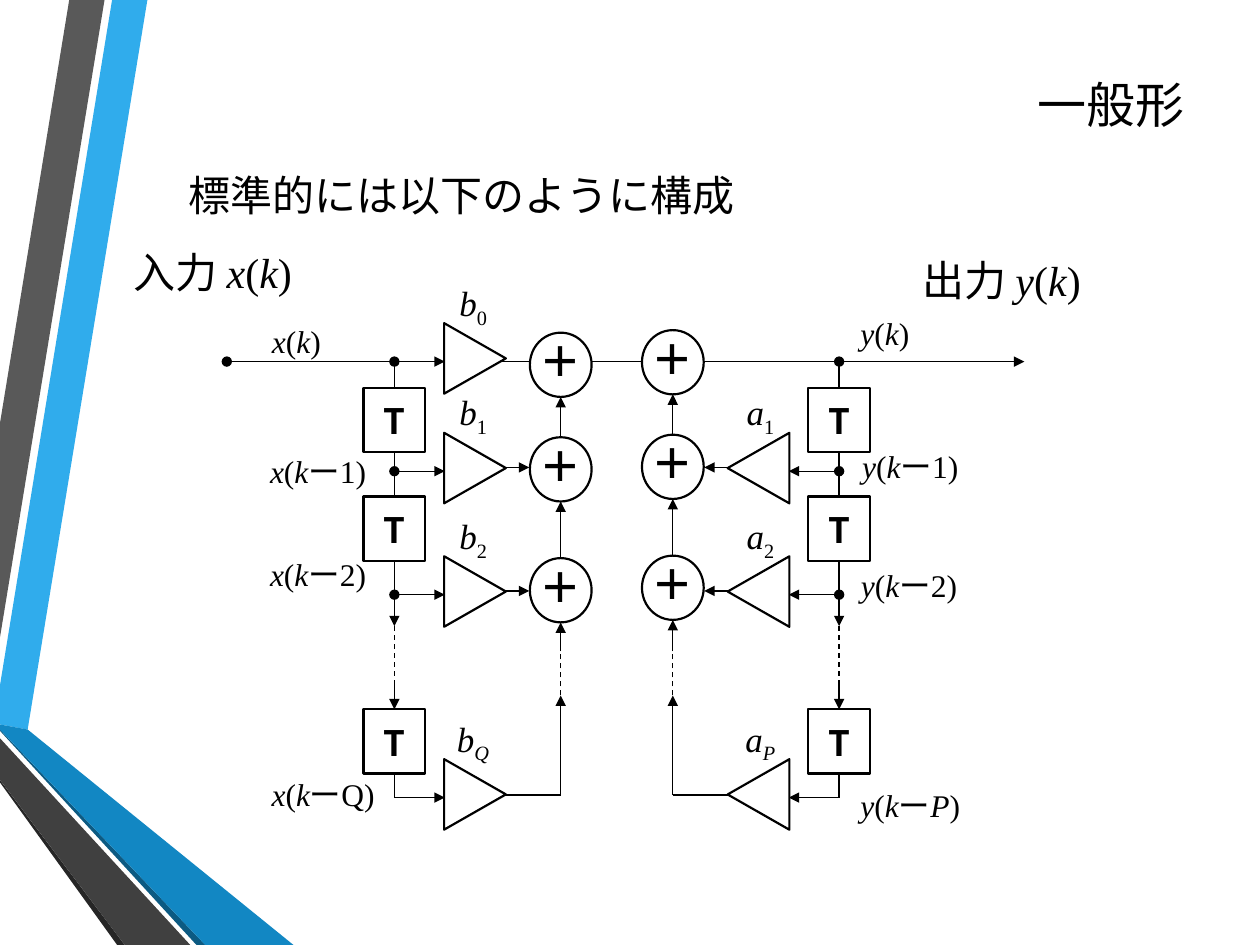
from lxml.etree import SubElement
from pptx import Presentation
from pptx.dml.color import RGBColor
from pptx.enum.dml import MSO_LINE
from pptx.enum.shapes import MSO_CONNECTOR, MSO_SHAPE
from pptx.enum.text import MSO_ANCHOR, PP_ALIGN
from pptx.oxml.ns import qn
from pptx.util import Inches, Pt

INK, PAPER = "000000", "FFFFFF"
SERIF, SANS, KANA = "Times New Roman", "Calibri", "Noto Sans CJK JP"
LEFT, MID, RIGHT = PP_ALIGN.LEFT, PP_ALIGN.CENTER, PP_ALIGN.RIGHT

TITLE = "一般形"
BANDS = [
    ("30ACEC", [(0, 5.44), (0, 5.75), (0.22, 5.79), (1.17, 0), (0.89, 0)]),
    ("595959", [(0.83, 0), (0.55, 0), (0, 3.36), (0, 5.06)]),
    ("262626", [(0, 6.19), (0, 6.21), (0.93, 7.5), (0.99, 7.5)]),
    ("0C5A82", [(0, 5.79), (0, 5.8), (1.56, 7.5), (1.63, 7.5)]),
    ("1287C3", [(0, 5.79), (1.63, 7.5), (2.33, 7.5), (0.22, 5.79), (0, 5.75)]),
    ("404040", [(0, 6.19), (0.99, 7.5), (1.51, 7.5), (0, 5.86)]),
]
NOTES = [
    ("標準的には以下のように構成", 1.4, 1.3, 8.1, 24, LEFT),
    ("出力 *y*(*k*)", 7.22, 1.97, 1.76, 24, LEFT),
    ("入力 *x*(*k*)", 0.96, 1.91, 1.76, 24, LEFT),
    ("*x*(*k*)", 2.06, 2.51, 1.14, 18, LEFT),
    ("*x*(*k*ー1)", 1.81, 3.54, 1.43, 18, MID),
    ("*x*(*k*ー2)", 1.81, 4.36, 1.43, 18, MID),
    ("*x*(*k*ーQ)", 1.85, 6.1, 1.43, 18, MID),
    ("*y*(*k*)", 6.73, 2.44, 1.14, 18, LEFT),
    ("*y*(*k*ー1)", 6.51, 3.5, 1.43, 18, MID),
    ("*y*(*k*ー2)", 6.5, 4.44, 1.43, 18, MID),
    ("*y*(*k*ー*P*)", 6.51, 6.19, 1.43, 18, MID),
]
TAPS = [2.87, 3.74, 4.72, 6.33]
SUMS = [2.64, 3.47, 4.43]
DELAYS = [3.08, 3.94, 5.63]
SIDES = [
    dict(way=1, col=3.13, amp=3.77, add=4.45, lift=0, turn=90,
         gains=["*b*_0", "*b*_1", "*b*_2", "*b**_Q*"]),
    dict(way=-1, col=6.66, amp=6.02, add=5.34, lift=0.02, turn=270,
         gains=[None, "*a*_1", "*a*_2", "*a**_P*"]),
]
WIDE, HIGH = 0.49, 0.51

deck = Presentation()
deck.slide_width, deck.slide_height = Inches(10), Inches(7.5)
slide = deck.slides.add_slide(deck.slide_layouts[5])
shapes = slide.shapes


def tint(part, code):
    """Give a fill a solid colour."""
    part.solid()
    part.fore_color.rgb = RGBColor.from_string(code)


def assign(item, values):
    """Set attributes from a dict."""
    for key, value in values.items():
        setattr(item, key, value)


def write(frame, text, size, align, face=SERIF, tight=False, **look):
    """Write text where *stars* mark italics and _ starts a subscript."""
    assign(frame, dict(word_wrap=True))
    para = frame.paragraphs[0]
    para.alignment = align
    if tight:
        para.line_spacing = Pt(16)
        assign(frame, dict(margin_left=0, margin_right=0, margin_bottom=0,
                           vertical_anchor=MSO_ANCHOR.MIDDLE))
    for num, piece in enumerate(text.split("*")):
        if not piece:
            continue
        run = para.add_run()
        run.text = piece.lstrip("_")
        font = run.font
        assign(font, dict(name=face, size=Pt(size), italic=num % 2 == 1, **look))
        tint(font.fill, INK)
        SubElement(run._r.rPr, qn("a:ea"), typeface=KANA)
        if piece.startswith("_"):
            run._r.rPr.set("baseline", "-25000")


def label(text, left, top, width, size, align, high=0.5, tight=False):
    """Add a text box."""
    box = shapes.add_textbox(*map(Inches, (left, top, width, high)))
    if tight:
        box.text_frame.margin_top = 0
    write(box.text_frame, text, size, align, tight=tight)


def block(kind, mid, top, width, high, text="", size=20, face=SANS, turn=0):
    """Add an outlined shape centred on mid."""
    item = shapes.add_shape(kind, *map(Inches, (mid - width / 2, top, width, high)))
    item.shadow.inherit = False
    item.rotation = turn
    tint(item.fill, PAPER)
    tint(item.line.fill, INK)
    item.line.width = Pt(1.25)
    if text:
        item.text_frame.margin_top = Inches(0.12)
        write(item.text_frame, text, size, MID, face, True, bold=True)
    return item


def wire(start, end, head=None, tail=None, dash=False):
    """Add a straight line with optional ends."""
    line = shapes.add_connector(MSO_CONNECTOR.STRAIGHT, *map(Inches, start + end))
    tint(line.line.fill, INK)
    line.line.width = Pt(0.75)
    if dash:
        line.line.dash_style = MSO_LINE.DASH
    props = line._element.spPr
    for tag, kind in (("a:headEnd", head), ("a:tailEnd", tail)):
        if kind:
            SubElement(props.find(qn("a:ln")), qn(tag), type=kind)
    SubElement(props, qn("a:effectLst"))
    return line


def branch(way, col, amp, add, lift, turn, gains):
    """Draw one delay line with its gains and adders."""
    back, tip, rim = amp - way * 0.24, amp + way * 0.24, add - way * 0.25
    tops = [top - lift for top in SUMS]
    wire((col, TAPS[0]), (col, 4.97), "oval", "triangle")
    wire((col, 4.97), (col, 5.41), dash=True)
    boxes = [block(MSO_SHAPE.RECTANGLE, col, top, WIDE, HIGH, "T", 20, KANA)
             for top in DELAYS]
    wire((col, 5.41), (col, 5.63), tail="triangle").end_connect(boxes[-1], 0)
    wire((col, 6.14), (col, TAPS[-1])).begin_connect(boxes[-1], 2)

    for num, (tap, gain) in enumerate(zip(TAPS, gains)):
        if not gain:
            continue
        head = "oval" if num in (1, 2) else None
        wire((col, tap), (back, tap), head, "triangle")
        if head:
            wire((tip, tap - 0.03), (rim, tap - 0.03), tail="triangle")
        block(MSO_SHAPE.ISOSCELES_TRIANGLE, amp, tap - 0.27, 0.56, WIDE, turn=turn)
        label(gain, amp - 0.23 + (0.03 if way < 0 else 0), tap - 0.58, 0.43, 20, MID, 0.42, True)

    wire((tip, 6.31), (add, 6.31))
    wire((add, 6.31), (add, 5.52), tail="triangle")
    wire((add, 5.52), (add, 5.17), dash=True)
    for top, low in zip(tops, tops[1:] + [5.17]):
        wire((add, low), (add, top + HIGH), tail="triangle")
        block(MSO_SHAPE.OVAL, add, top, WIDE, HIGH, "＋", 24)


for code, spots in BANDS:
    grid = [(round(x * 100), round(y * 100)) for x, y in spots]
    pen = shapes.build_freeform(*grid[0], scale=9144)
    pen.add_line_segments(grid[1:], close=True)
    band = pen.convert_to_shape()
    band.shadow.inherit = False
    tint(band.fill, code)
    band.line.fill.background()

title = shapes.title
assign(title, dict(left=Inches(1.07), top=Inches(0.5),
                   width=Inches(8.43), height=Inches(0.65)))
title.text_frame.vertical_anchor = MSO_ANCHOR.MIDDLE
write(title.text_frame, TITLE, 28, RIGHT, SANS)

wire((1.8, TAPS[0]), (8.13, TAPS[0]), "oval", "triangle")
for side in SIDES:
    branch(**side)
for note in NOTES:
    label(*note)

deck.save("out.pptx")
